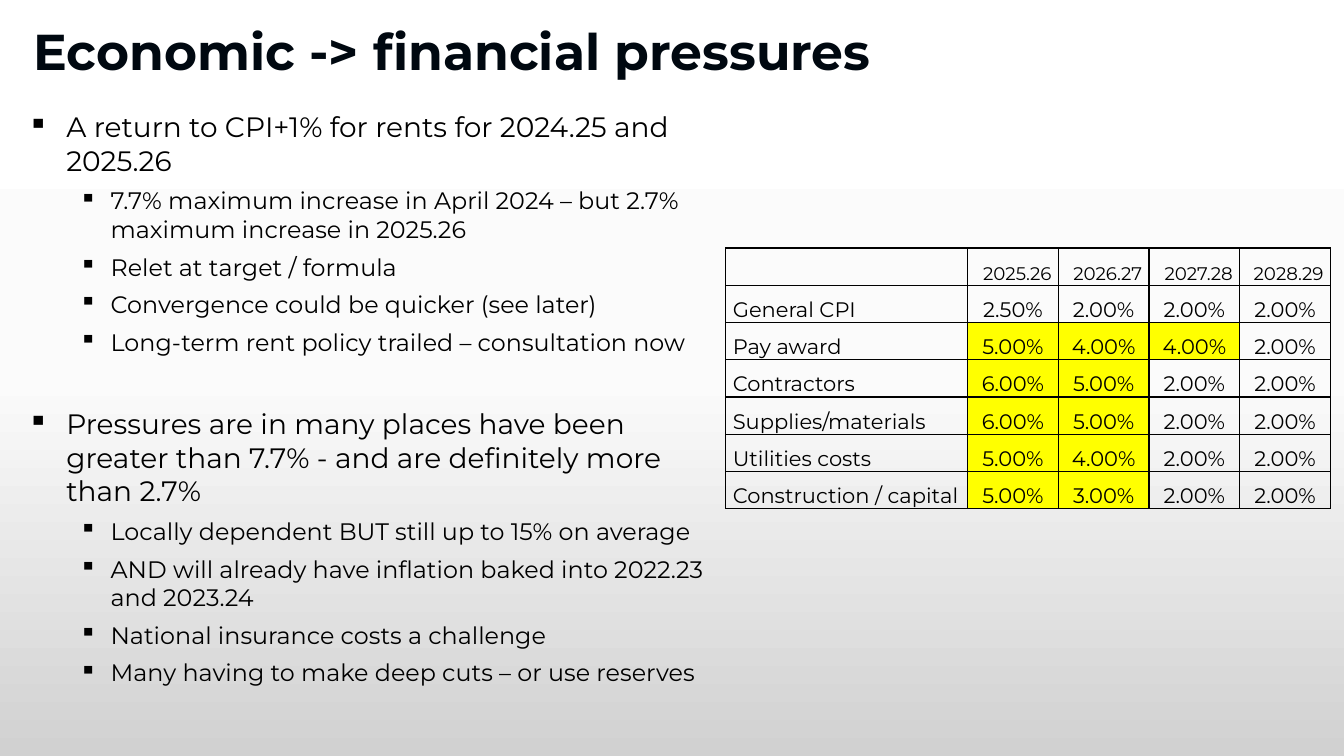
from copy import deepcopy
from dataclasses import dataclass

from pptx import Presentation
from pptx.dml.color import RGBColor
from pptx.enum.text import MSO_ANCHOR, PP_ALIGN
from pptx.oxml.ns import qn
from pptx.oxml.xmlchemy import OxmlElement
from pptx.slide import Slide
from pptx.table import _Cell
from pptx.text.text import TextFrame, _Paragraph
from pptx.util import Inches, Pt

SLIDE_WIDTH, SLIDE_HEIGHT = Inches(13.33), Inches(7.5)
COLUMN, ROW = SLIDE_WIDTH / 48, SLIDE_HEIGHT / 30

FONT = "Montserrat"
BLACK = RGBColor(0x00, 0x00, 0x00)
TITLE_INK = RGBColor(0x00, 0x08, 0x10)
YELLOW = RGBColor(0xFF, 0xFF, 0x00)
BACKDROP = (
    (0.0, RGBColor(0xFF, 0xFF, 0xFF)),
    (0.5, RGBColor(0xFB, 0xFB, 0xFB)),
    (1.0, RGBColor(0xD1, 0xD1, 0xD1)),
)

LEFT, CENTER, RIGHT = PP_ALIGN.LEFT, PP_ALIGN.CENTER, PP_ALIGN.RIGHT
BOTTOM = MSO_ANCHOR.BOTTOM


@dataclass(frozen=True)
class Area:
    """A place on the slide, in grid columns and rows."""
    column: float
    row: float
    columns: float
    rows: float

    def emu(self) -> tuple[int, int, int, int]:
        return (round(self.column * COLUMN), round(self.row * ROW),
                round(self.columns * COLUMN), round(self.rows * ROW))


@dataclass(frozen=True)
class BulletStyle:
    level: int
    size: float
    margin: float
    hanging: float


@dataclass(frozen=True)
class Bullet:
    text: str
    style: BulletStyle
    space_before: float = 6.5


@dataclass(frozen=True)
class CostLine:
    label: str
    rates: tuple[float, ...]


MAIN = BulletStyle(level=0, size=20, margin=0.44, hanging=0.38)
DETAIL = BulletStyle(level=1, size=17, margin=0.88, hanging=0.31)

TITLE_AREA = Area(0.83, 0.88, 38, 2.96)
BULLET_AREA = Area(0.43, 4.16, 25.49, 24.28)
LABEL_COLUMNS, YEAR_COLUMNS, LINE_ROWS = 8.64, 3.24, 1.48

BULLETS = (
    Bullet("A return to CPI+1% for rents for 2024.25 and 2025.26", MAIN, 0),
    Bullet("7.7% maximum increase in April 2024 – but 2.7% maximum increase in 2025.26", DETAIL),
    Bullet("Relet at target / formula", DETAIL),
    Bullet("Convergence could be quicker (see later)", DETAIL),
    Bullet("Long-term rent policy trailed – consultation now", DETAIL),
    Bullet("Pressures are in many places have been greater than 7.7% - "
           "and are definitely more than 2.7%", MAIN, 36),
    Bullet("Locally dependent BUT still up to 15% on average", DETAIL),
    Bullet("AND will already have inflation baked into 2022.23 and 2023.24", DETAIL),
    Bullet("National insurance costs a challenge", DETAIL),
    Bullet("Many having to make deep cuts – or use reserves", DETAIL),
)

YEARS = ("2025.26", "2026.27", "2027.28", "2028.29")
COST_LINES = (
    CostLine("General CPI", (2.5, 2, 2, 2)),
    CostLine("Pay award", (5, 4, 4, 2)),
    CostLine("Contractors", (6, 5, 2, 2)),
    CostLine("Supplies/materials", (6, 5, 2, 2)),
    CostLine("Utilities costs", (5, 4, 2, 2)),
    CostLine("Construction / capital", (5, 3, 2, 2)),
)
HIGH_RATE = 3


def write(paragraph: _Paragraph, text: str, *, size: float, color: RGBColor = BLACK,
          bold: bool = False, align: PP_ALIGN = LEFT) -> None:
    paragraph.alignment = align
    run = paragraph.add_run()
    run.text = text
    run.font.name = FONT
    run.font.size = Pt(size)
    run.font.bold = bold
    run.font.color.rgb = color


def paint_background(slide: Slide) -> None:
    fill = slide.background.fill
    fill.gradient()
    fill.gradient_angle = 270
    stop_list = next(slide.element.iter(qn("a:gsLst")))
    stop_list.append(deepcopy(stop_list[0]))
    for stop, (position, color) in zip(fill.gradient_stops, BACKDROP):
        stop.position = position
        stop.color.rgb = color


def add_text_area(slide: Slide, area: Area) -> TextFrame:
    frame = slide.shapes.add_textbox(*area.emu()).text_frame
    frame.word_wrap = True
    return frame


def add_title(slide: Slide) -> None:
    heading = add_text_area(slide, TITLE_AREA).paragraphs[0]
    heading.line_spacing = 0.9
    write(heading, "Economic -> financial pressures", size=36, color=TITLE_INK, bold=True)


def add_bullets(slide: Slide) -> None:
    frame = add_text_area(slide, BULLET_AREA)
    for index, bullet in enumerate(BULLETS):
        paragraph = frame.add_paragraph() if index else frame.paragraphs[0]
        style = bullet.style
        paragraph.level = style.level
        properties = paragraph._p.get_or_add_pPr()
        properties.set("marL", str(Inches(style.margin)))
        properties.set("indent", str(-Inches(style.hanging)))
        mark = OxmlElement("a:buChar")
        mark.set("char", "▪")
        properties.append(mark)
        paragraph.space_before = Pt(bullet.space_before)
        write(paragraph, bullet.text, size=style.size)


def outline(cell: _Cell) -> None:
    """Draw black borders; call before the cell gets its fill."""
    properties = cell._tc.get_or_add_tcPr()
    for side in ("lnL", "lnR", "lnT", "lnB"):
        border = OxmlElement(f"a:{side}")
        border.set("w", str(Pt(1)))
        solid = OxmlElement("a:solidFill")
        ink = OxmlElement("a:srgbClr")
        ink.set("val", str(BLACK))
        solid.append(ink)
        border.append(solid)
        properties.append(border)


def fill_cell(cell: _Cell, text: str, *, size: float, align: PP_ALIGN,
              highlight: bool = False) -> None:
    outline(cell)
    if highlight:
        cell.fill.solid()
        cell.fill.fore_color.rgb = YELLOW
    else:
        cell.fill.background()
    cell.vertical_anchor = BOTTOM
    cell.margin_left = cell.margin_right = Inches(0.07)
    cell.margin_top = cell.margin_bottom = 0
    if text:
        write(cell.text_frame.paragraphs[0], text, size=size, align=align)


def add_cost_table(slide: Slide) -> None:
    line_count, column_count = len(COST_LINES) + 1, len(YEARS) + 1
    area = Area(25.92, 9.84, LABEL_COLUMNS + YEAR_COLUMNS * len(YEARS), LINE_ROWS * line_count)
    table = slide.shapes.add_table(line_count, column_count, *area.emu()).table
    table.first_row = table.horz_banding = False
    for index, column in enumerate(table.columns):
        column.width = round((YEAR_COLUMNS if index else LABEL_COLUMNS) * COLUMN)
    for index, year in enumerate(("", *YEARS)):
        fill_cell(table.cell(0, index), year, size=13, align=RIGHT)
    for row, line in enumerate(COST_LINES, start=1):
        fill_cell(table.cell(row, 0), line.label, size=15, align=LEFT)
        for index, rate in enumerate(line.rates, start=1):
            fill_cell(table.cell(row, index), f"{rate:.2f}%", size=15, align=CENTER,
                      highlight=rate >= HIGH_RATE)


def main() -> None:
    presentation = Presentation()
    presentation.slide_width, presentation.slide_height = SLIDE_WIDTH, SLIDE_HEIGHT
    slide = presentation.slides.add_slide(presentation.slide_layouts[6])
    paint_background(slide)
    add_title(slide)
    add_bullets(slide)
    add_cost_table(slide)
    presentation.save("out.pptx")


if __name__ == "__main__":
    main()
